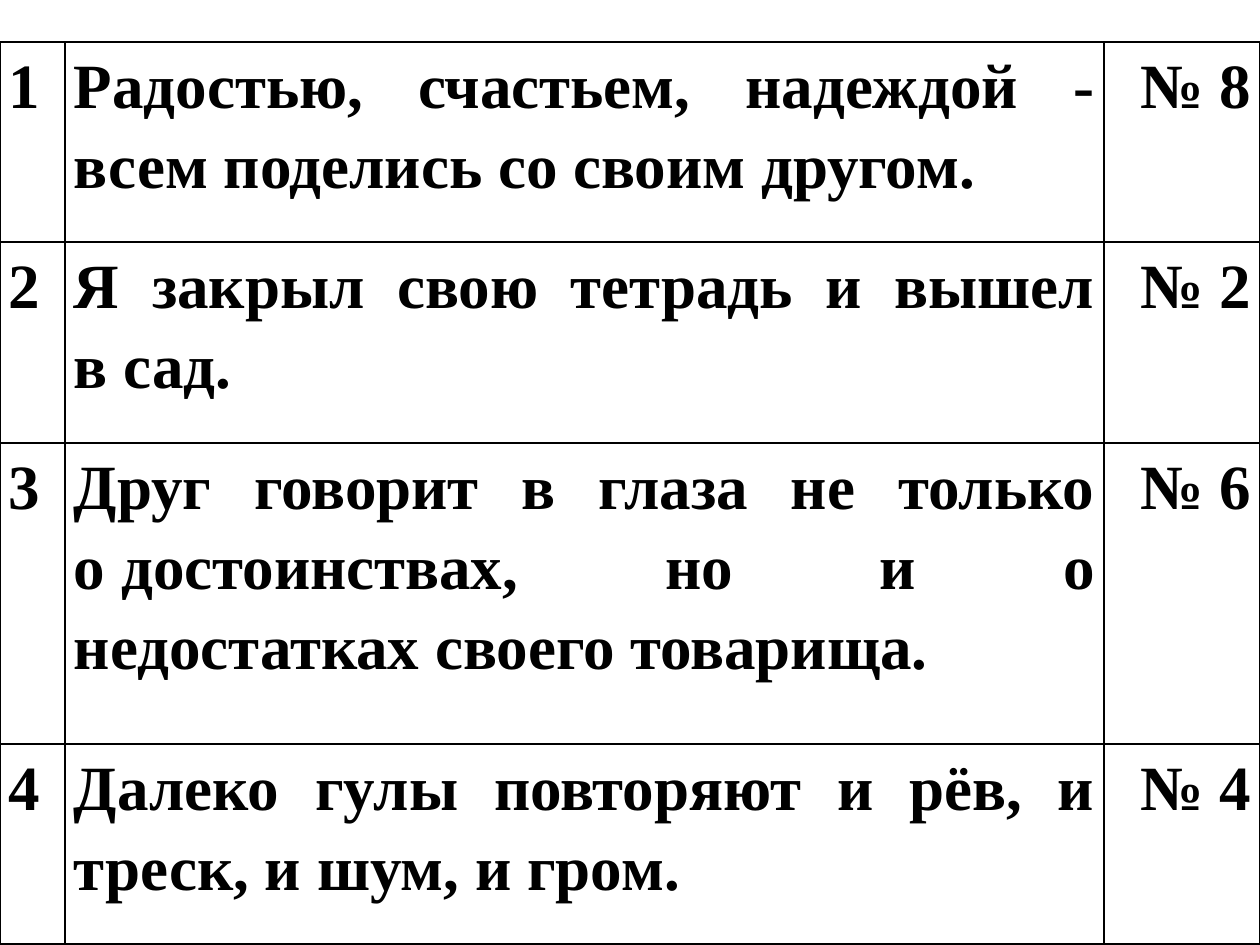
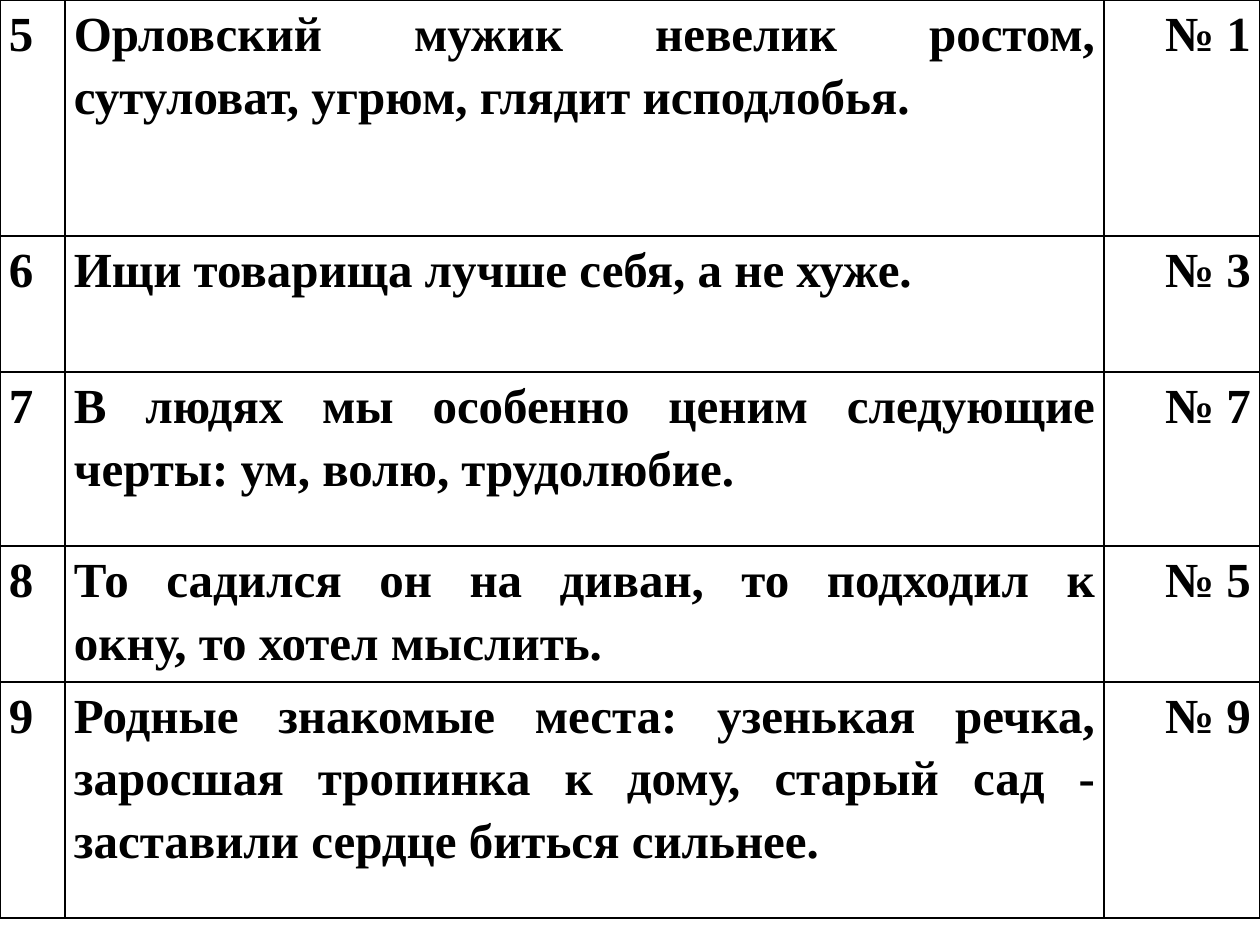
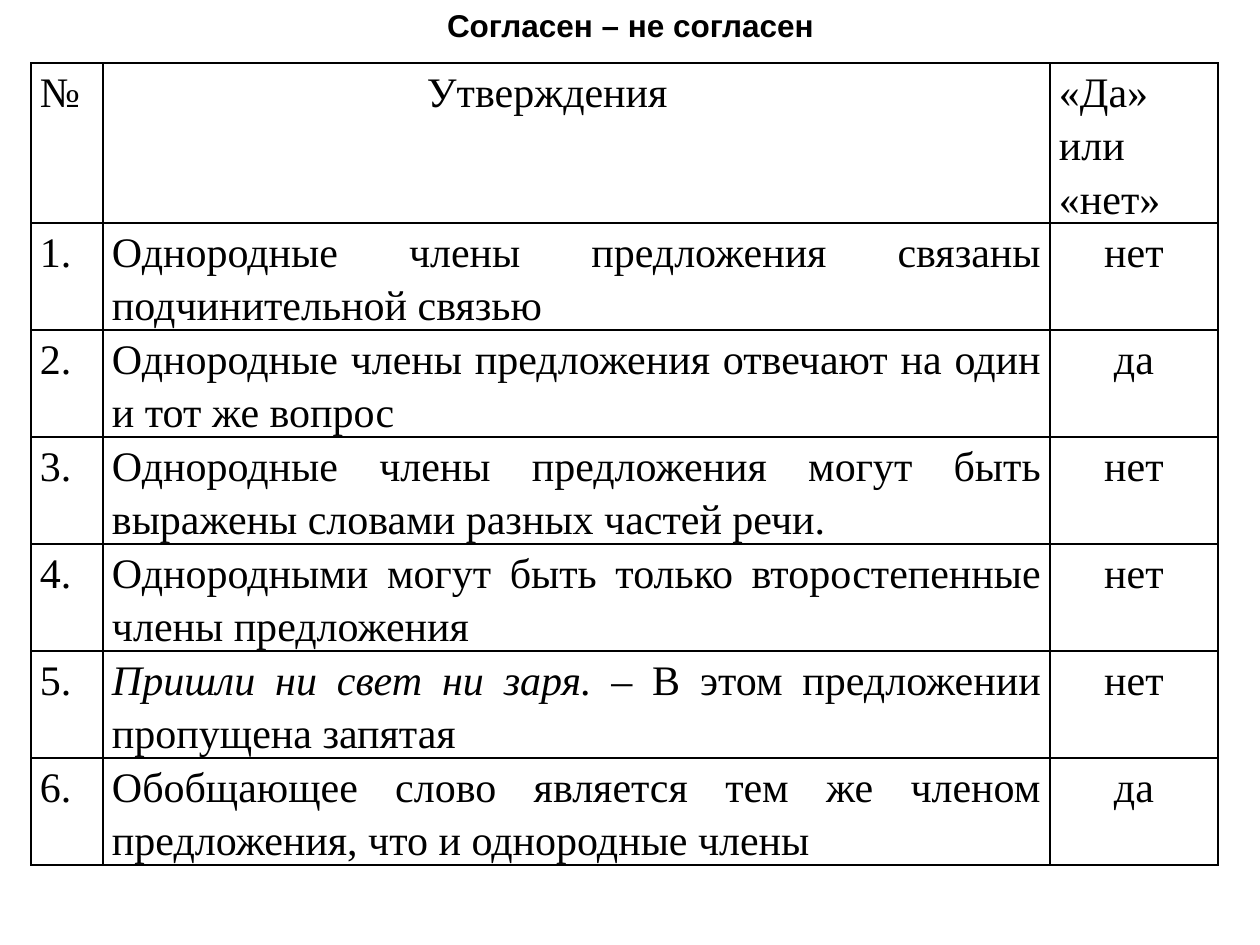
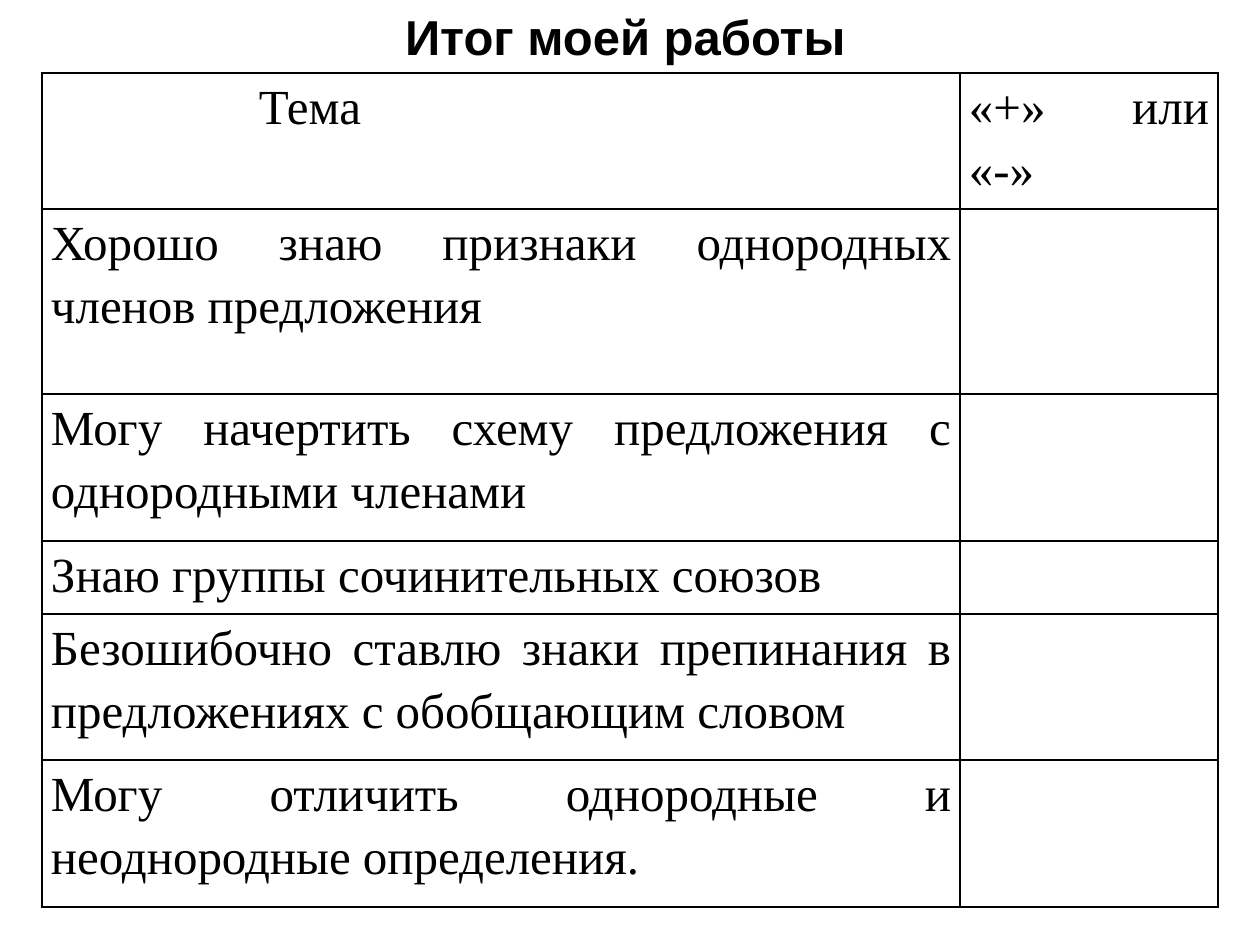
from dataclasses import dataclass

import pptx
import pptx.dml.color
import pptx.enum.text
import pptx.oxml
import pptx.oxml.ns
import pptx.util

ALIGN = pptx.enum.text.PP_ALIGN
LAYOUT_TITLE_ONLY, LAYOUT_BLANK = 5, 6


@dataclass(frozen=True)
class Theme:
    ink: str = "000000"
    body_font: str = "Times New Roman"
    title_font: str = "Arial"
    huge: int = 36
    large: int = 28
    medium: int = 24
    small: int = 18
    line_spacing: float = 1.15
    border_pt: int = 1
    cell_inset: int = 9


THEME = Theme()


def px(n):
    """Length on a grid of 126 px to the inch."""
    return pptx.util.Inches(n / 126)


def style_font(font, name, size, bold=False):
    font.name = name
    font.size = pptx.util.Pt(size)
    font.bold = bold
    font.color.rgb = pptx.dml.color.RGBColor.from_string(THEME.ink)


def add_borders(cell):
    tc_pr = cell._tc.get_or_add_tcPr()
    width = pptx.util.Pt(THEME.border_pt)
    for i, side in enumerate(("lnL", "lnR", "lnT", "lnB")):
        tc_pr.insert(i, pptx.oxml.parse_xml(
            f'<a:{side} {pptx.oxml.ns.nsdecls("a")} w="{width}"><a:solidFill>'
            f'<a:srgbClr val="{THEME.ink}"/></a:solidFill></a:{side}>'))


def fill_cell(cell, text, size, bold, align, indent=0):
    """Write one cell: *...* is italic, ~ keeps two words on one line."""
    cell.fill.background()
    add_borders(cell)
    cell.margin_left = cell.margin_right = px(THEME.cell_inset)
    cell.margin_top = cell.margin_bottom = 0
    p = cell.text_frame.paragraphs[0]
    p.alignment = align
    p.line_spacing = THEME.line_spacing
    if indent:
        p._p.get_or_add_pPr().set("marL", str(px(indent)))
    for i, part in enumerate(text.split("*")):
        if part:
            r = p.add_run()
            r.text = part.replace("~", chr(160))
            style_font(r.font, THEME.body_font, size, bold)
            r.font.italic = i % 2 == 1


def add_grid(slide, left, top, cols, heights, rows, size, bold=False,
             answer_align=ALIGN.JUSTIFY, header_indents=None):
    """Bordered table; a header, if any, is justified with its own indents."""
    frame = slide.shapes.add_table(len(rows), len(cols), px(left), px(top),
                                   px(sum(cols)), px(sum(heights)))
    table = frame.table
    table.first_row = table.horz_banding = False
    for column, width in zip(table.columns, cols):
        column.width = px(width)
    for i, (height, texts) in enumerate(zip(heights, rows)):
        table.rows[i].height = px(height)
        is_header = header_indents is not None and i == 0
        for j, text in enumerate(texts):
            is_answer = j == len(cols) - 1 and not is_header
            fill_cell(table.cell(i, j), text, size, bold,
                      answer_align if is_answer else ALIGN.JUSTIFY,
                      header_indents[j] if is_header else 0)


def set_title(slide, text, left, width, height, inset, size):
    sp = slide.shapes.title
    sp.left, sp.top, sp.width, sp.height = px(left), 0, px(width), px(height)
    tf = sp.text_frame
    tf.text = text
    tf.word_wrap = True
    tf.auto_size = pptx.enum.text.MSO_AUTO_SIZE.NONE
    tf.vertical_anchor = pptx.enum.text.MSO_ANCHOR.MIDDLE
    tf.margin_left, tf.margin_right = px(inset), 0
    p = tf.paragraphs[0]
    p.alignment = ALIGN.LEFT
    style_font(p.runs[0].font, THEME.title_font, size, bold=True)


def add_sentences_slide(prs, top, heights, first_number, sentences, size):
    """Numbered sentences, each with the number of its scheme."""
    slide = prs.slides.add_slide(prs.slide_layouts[LAYOUT_BLANK])
    rows = [(str(n), text, f"№ {scheme}")
            for n, (text, scheme) in enumerate(sentences, first_number)]
    add_grid(slide, 0, top, (65, 1039, 156), heights, rows, size, bold=True,
             answer_align=ALIGN.RIGHT)


def add_statements_slide(prs):
    slide = prs.slides.add_slide(prs.slide_layouts[LAYOUT_TITLE_ONLY])
    set_title(slide, "Согласен – не согласен", 336, 493, 50, 111, THEME.small)
    rows = [("№", "Утверждения", "«Да» или «нет»")]
    rows += [(f"{n}.", text, answer)
             for n, (text, answer) in enumerate(STATEMENTS, 1)]
    add_grid(slide, 31, 63, (72, 947, 168), [160] + [107] * len(STATEMENTS),
             rows, THEME.medium, answer_align=ALIGN.CENTER,
             header_indents=(0, 315, 0))


def add_summary_slide(prs):
    slide = prs.slides.add_slide(prs.slide_layouts[LAYOUT_TITLE_ONLY])
    set_title(slide, "Итог моей работы", 357, 534, 72, 48, THEME.large)
    rows = [("Тема", "«+» или «-»")] + [(skill, "") for skill in SKILLS]
    add_grid(slide, 42, 73, (918, 258), (136, 185, 147, 73, 146, 147), rows,
             THEME.large, header_indents=(208, 0))


# Content
SENTENCES_1 = [
    ("Радостью, счастьем, надеждой - всем поделись со своим другом.", 8),
    ("Я закрыл свою тетрадь и вышел в~сад.", 2),
    ("Друг говорит в глаза не только о~достоинствах, но и о "
     "недостатках~своего товарища.", 6),
    ("Далеко гулы повторяют и рёв, и треск, и шум, и гром.", 4),
]
SENTENCES_2 = [
    ("Орловский мужик невелик ростом, сутуловат,~угрюм, глядит "
     "исподлобья.", 1),
    ("Ищи товарища лучше себя, а не хуже.", 3),
    ("В людях мы особенно ценим следующие черты: ум, волю, "
     "трудолюбие.", 7),
    ("То садился он на диван, то подходил к окну,~то~хотел мыслить.", 5),
    ("Родные знакомые места: узенькая речка, заросшая тропинка к дому, "
     "старый сад - заставили сердце биться сильнее.", 9),
]
STATEMENTS = [
    ("Однородные члены предложения связаны подчинительной связью", "нет"),
    ("Однородные члены предложения отвечают на один и тот же вопрос", "да"),
    ("Однородные члены предложения могут быть выражены словами разных "
     "частей речи.", "нет"),
    ("Однородными могут быть только второстепенные члены предложения",
     "нет"),
    ("*Пришли ни свет ни заря.* – В этом предложении пропущена запятая",
     "нет"),
    ("Обобщающее слово является тем же членом предложения, что и "
     "однородные члены", "да"),
]
SKILLS = [
    "Хорошо знаю признаки однородных членов предложения",
    "Могу начертить схему предложения с однородными членами",
    "Знаю группы сочинительных союзов",
    "Безошибочно ставлю знаки препинания в предложениях с обобщающим словом",
    "Могу отличить однородные и неоднородные определения.",
]


def main():
    prs = pptx.Presentation()
    prs.slide_width, prs.slide_height = px(1260), px(945)
    add_sentences_slide(prs, 42, (200, 201, 301, 200), 1, SENTENCES_1,
                        THEME.huge)
    add_sentences_slide(prs, 0, (236, 136, 174, 136, 236), 5, SENTENCES_2,
                        THEME.large)
    add_statements_slide(prs)
    add_summary_slide(prs)
    prs.save("out.pptx")


if __name__ == "__main__":
    main()
